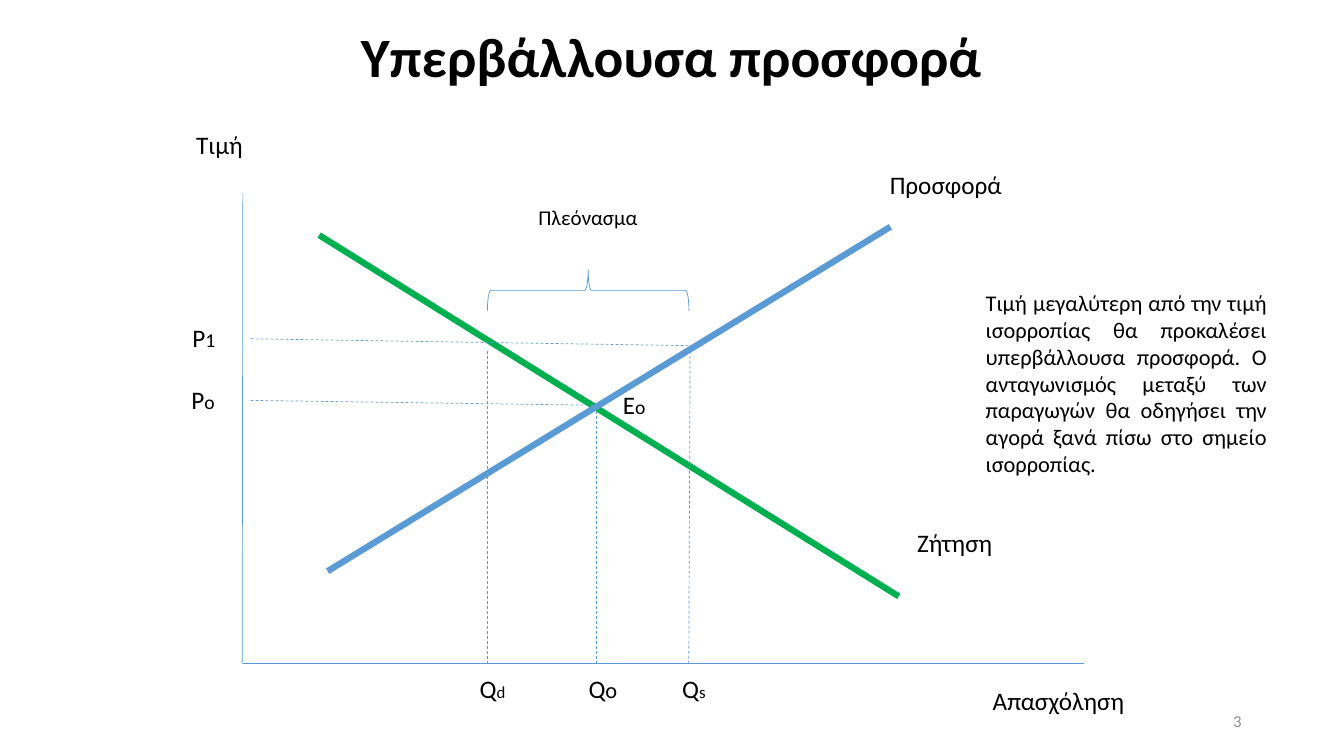
from lxml import etree
from pptx import Presentation
from pptx.dml.color import RGBColor
from pptx.enum import dml, shapes, text
from pptx.oxml.ns import qn
from pptx.util import Pt

BLACK = RGBColor(0x00, 0x00, 0x00)
GREY = RGBColor(0x8C, 0x8C, 0x8C)
BLUE = RGBColor(0x5B, 0x9B, 0xD5)
GREEN = RGBColor(0x00, 0xB0, 0x50)
FONT = "Calibri"
LABEL_H = 29
LEFT, CENTER, RIGHT, JUSTIFY = (
    text.PP_ALIGN.LEFT, text.PP_ALIGN.CENTER, text.PP_ALIGN.RIGHT, text.PP_ALIGN.JUSTIFY)


def set_font(font, size, color=BLACK, bold=False):
    font.name = FONT
    font.size = Pt(size)
    font.bold = bold
    font.color.rgb = color


def add_text(s, box, words, size=18, color=BLACK, align=LEFT, wrap=True, sub="", sub_size=14):
    """Add a text box; sub is a smaller ending to the words."""
    tf = s.shapes.add_textbox(*map(Pt, box)).text_frame
    tf.word_wrap = wrap
    p = tf.paragraphs[0]
    p.alignment = align
    set_font(p.font, size, color)
    p.add_run().text = words
    if sub:
        r = p.add_run()
        r.text = sub
        r.font.size = Pt(sub_size)
    return tf


def add_line(s, x, y, ends, color=BLUE, width=0.5, dashed=False):
    """Draw a line whose ends are measured from the point x, y."""
    x1, y1, x2, y2 = ends
    cn = s.shapes.add_connector(shapes.MSO_CONNECTOR.STRAIGHT,
                                Pt(x + x1), Pt(y + y1), Pt(x + x2), Pt(y + y2))
    cn.line.color.rgb = color
    cn.line.width = Pt(width)
    if dashed:
        cn.line.dash_style = dml.MSO_LINE.DASH
    etree.SubElement(cn._element.spPr, qn("a:effectLst"))


def add_title(s, box, words):
    sp = s.shapes.title
    sp.left, sp.top, sp.width, sp.height = map(Pt, box)
    tf = sp.text_frame
    tf.text = words
    tf.vertical_anchor = text.MSO_ANCHOR.MIDDLE
    p = tf.paragraphs[0]
    p.alignment = CENTER
    p.line_spacing = 0.9
    set_font(p.font, 39.6, bold=True)


def add_surplus_brace(s, x, y):
    sp = s.shapes.add_shape(shapes.MSO_SHAPE.RIGHT_BRACE, Pt(x), Pt(y), Pt(29.5), Pt(144))
    sp.rotation = 270
    sp.shadow.inherit = False
    sp.fill.background()
    sp.line.color.rgb = BLUE
    sp.line.width = Pt(0.5)


def add_market_diagram(s, x, y, w, h):
    """Draw axes, curves, guides and labels in the box spanned by the axes."""
    for axis in ((0.5, 0, 0, h), (w, h, 0.5, h)):
        add_line(s, x, y, axis)
    add_line(s, x, y, (55, 30, 469, 288), GREEN, 4.5)
    add_line(s, x, y, (61, 270, 463, 24), BLUE, 4.5)

    price_guides = [(6, 148, 253, 151.5), (6, 104, 325, 109)]
    quantity_guides = [(253, h, 253, 156.5), (175, h, 175, 112), (319, h, 320, 108)]
    for guide in price_guides + quantity_guides:
        add_line(s, x, y, guide, dashed=True)

    for words, dx, dy, width in (("Τιμή", -40, -49.5, 81),
                                 ("Απασχόληση", w - 72, h + 12, 112),
                                 ("Προσφορά", 455.5, -20.5, 133),
                                 ("Ζήτηση", 475, 235, 133)):
        add_text(s, (x + dx, y + dy, width, LABEL_H), words)

    quantity_y = h + 3.4
    for words, sub, sub_size, dx, dy, width in (("P", "o", 14, -43.4, 132.7, 32),
                                                ("P", "1", 14, -42.7, 88.8, 31),
                                                ("E", "o", 14, 264.8, 136.3, 31),
                                                ("Q", "d", 12, 162.5, quantity_y, 33),
                                                ("Q", "o", 16, 240.3, quantity_y, 35),
                                                ("Q", "s", 12, 307.2, quantity_y, 32)):
        add_text(s, (x + dx, y + dy, width, LABEL_H), words,
                 wrap=False, sub=sub, sub_size=sub_size)

    add_surplus_brace(s, x + 232.4, y - 2.6)
    add_text(s, (x + 192, y + 4.6, 110, 25), "Πλεόνασμα", 15, align=CENTER)


def main():
    prs = Presentation()
    prs.slide_width, prs.slide_height = Pt(960), Pt(540)
    s = prs.slides.add_slide(prs.slide_layouts[5])
    add_title(s, (169, 18, 621, 49), "Υπερβάλλουσα προσφορά")
    add_market_diagram(s, 173, 138, 601, 336)
    add_text(s, (697, 203, 215, 143),
             "Τιμή μεγαλύτερη από την τιμή ισορροπίας θα προκαλέσει υπερβάλλουσα προσφορά. "
             "Ο ανταγωνισμός μεταξύ των παραγωγών θα οδηγήσει την αγορά ξανά πίσω στο σημείο "
             "ισορροπίας.", 16, align=JUSTIFY)
    number = add_text(s, (678, 500.5, 216, LABEL_H), "3", 12, GREY, RIGHT)
    number.vertical_anchor = text.MSO_ANCHOR.MIDDLE
    prs.save("out.pptx")


if __name__ == "__main__":
    main()
